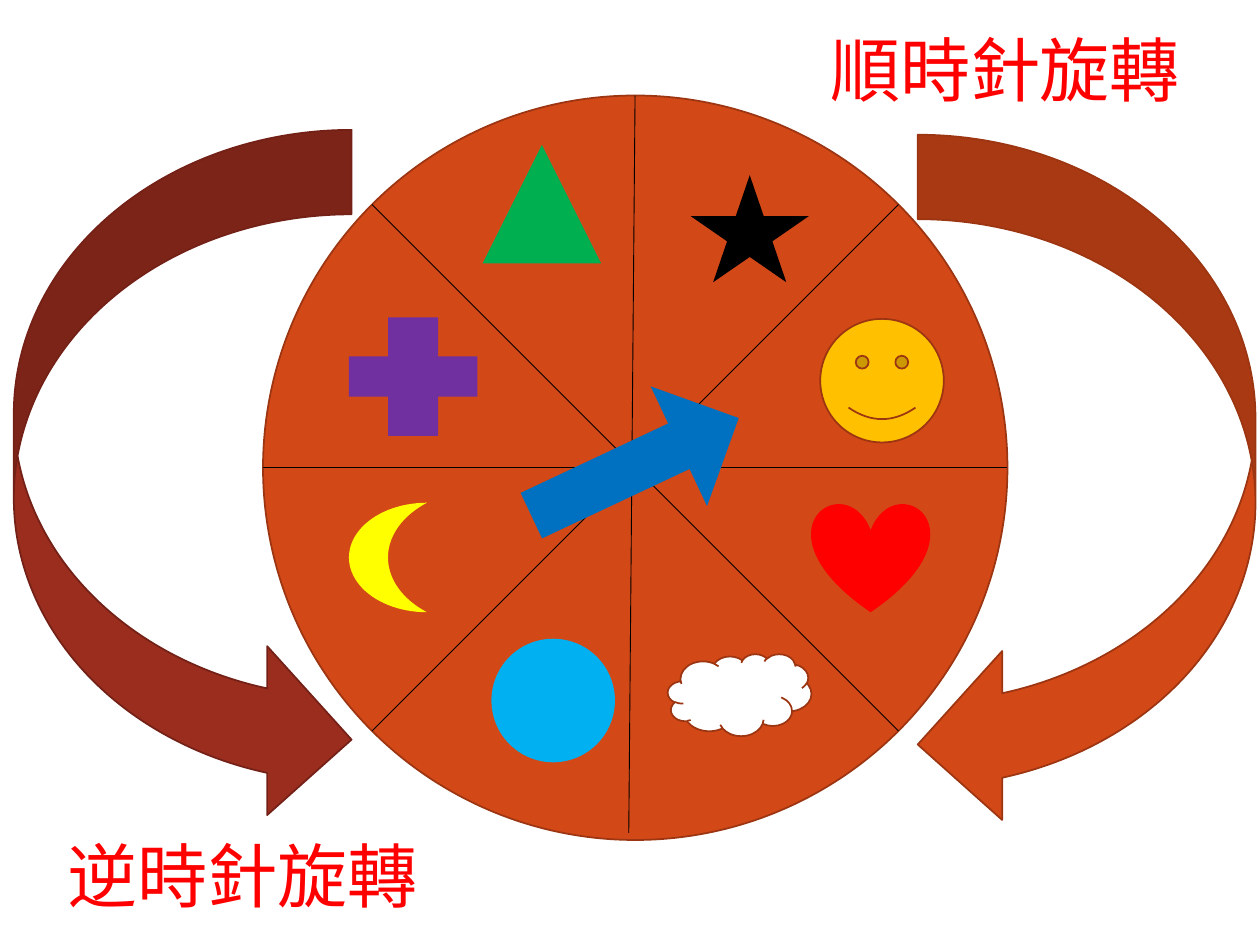
from math import cos, pi

from lxml import etree
from pptx import Presentation
from pptx.dml.color import RGBColor
from pptx.enum.shapes import MSO_CONNECTOR, MSO_SHAPE
from pptx.enum.text import MSO_AUTO_SIZE
from pptx.oxml.ns import qn
from pptx.util import Pt

STRAIGHT = MSO_CONNECTOR.STRAIGHT
OVAL = MSO_SHAPE.OVAL
CURVED_ARROW = MSO_SHAPE.CURVED_LEFT_ARROW
FIT_SHAPE = MSO_AUTO_SIZE.SHAPE_TO_FIT_TEXT

FONT = "TeX Gyre Bonum"
ORANGE, BROWN = "D34817", "9C3511"
MAROON, DARK_MAROON = "9B2D1F", "732117"
RED, BLACK = "FF0000", "000000"


def color(value):
    return RGBColor.from_string(value)


class SpinnerSlide:
    def __init__(self, page):
        self.page = page

    def shape(self, kind, left, top, width, height, fill, line=None,
              adjust=(), rotation=0, flip=False):
        shape = self.page.shapes.add_shape(
            kind, Pt(left), Pt(top), Pt(width), Pt(height))
        shape.shadow.inherit = False
        shape.fill.solid()
        shape.fill.fore_color.rgb = color(fill)
        if line:
            shape.line.color.rgb = color(line)
            shape.line.width = Pt(1)
        else:
            shape.line.fill.background()
        for index, value in enumerate(adjust):
            shape.adjustments[index] = value
        shape.rotation = rotation
        if flip:
            shape._element.spPr.find(qn("a:xfrm")).set("flipH", "1")

    def line(self, x1, y1, x2, y2):
        line = self.page.shapes.add_connector(
            STRAIGHT, Pt(x1), Pt(y1), Pt(x2), Pt(y2))
        line.line.color.rgb = color(BLACK)
        line.line.width = Pt(0.5)
        etree.SubElement(line._element.spPr, qn("a:effectLst"))

    def label(self, text, left, top):
        box = self.page.shapes.add_textbox(
            Pt(left), Pt(top), Pt(216.7), Pt(55.4))
        frame = box.text_frame
        frame.word_wrap = False
        frame.auto_size = FIT_SHAPE
        para = frame.paragraphs[0]
        para.text = text
        para.font.name = FONT
        para.font.size = Pt(40)
        para.font.color.rgb = color(RED)


def main():
    deck = Presentation()
    deck.slide_width, deck.slide_height = Pt(720), Pt(540)
    slide = SpinnerSlide(deck.slides.add_slide(deck.slide_layouts[6]))

    # Wheel
    center_x, center_y, radius = 363, 267.3, 212.7
    slide.shape(OVAL, center_x - radius, center_y - radius,
                2 * radius, 2 * radius, ORANGE, BROWN)

    # Dividers between the eight sectors
    reach = radius * cos(pi / 4)
    for rise in (reach, -reach):
        slide.line(center_x - reach, center_y + rise,
                   center_x + reach, center_y - rise)
    slide.line(362.9, 54.7, 359.3, 475.9)
    slide.line(center_x - radius, center_y, center_x + radius, center_y)

    # Sector symbols, clockwise from the top left
    slide.shape(MSO_SHAPE.ISOSCELES_TRIANGLE, 275.8, 82.8, 67.7, 67.7, "00B050")
    slide.shape(MSO_SHAPE.STAR_5_POINT, 394.6, 100.1, 67.7, 61.2, BLACK)
    slide.shape(MSO_SHAPE.SMILEY_FACE, 468.7, 182.2, 70.6, 70.6, "FFC000", BROWN)
    slide.shape(MSO_SHAPE.HEART, 463.7, 287.3, 67.7, 62.6, RED)
    slide.shape(MSO_SHAPE.CLOUD, 381.6, 373.7, 82.1, 46.8, "FFFFFF", BROWN)
    slide.shape(OVAL, 280.8, 365, 70.6, 70.6, "00B0F0")
    slide.shape(MSO_SHAPE.MOON, 199.4, 287.3, 44.6, 62.6, "FFFF00")
    slide.shape(MSO_SHAPE.CROSS, 199.4, 181.4, 73.4, 67.7, "7030A0", adjust=[0.33])

    # Pointer
    slide.shape(MSO_SHAPE.RIGHT_ARROW, 297.4, 229, 131, 75.6, "0070C0",
                adjust=[0.38, 0.5], rotation=334.8)

    # Rotation arrows and their labels
    slide.shape(CURVED_ARROW, 524.4, 77, 193, 396.7, ORANGE, BROWN)
    slide.label("順時針旋轉", 467.3, 11.5)
    slide.shape(CURVED_ARROW, 7.9, 74.2, 193, 396.7, MAROON, DARK_MAROON, flip=True)
    slide.label("逆時針旋轉", 31.7, 472.3)

    deck.save("out.pptx")


if __name__ == "__main__":
    main()
